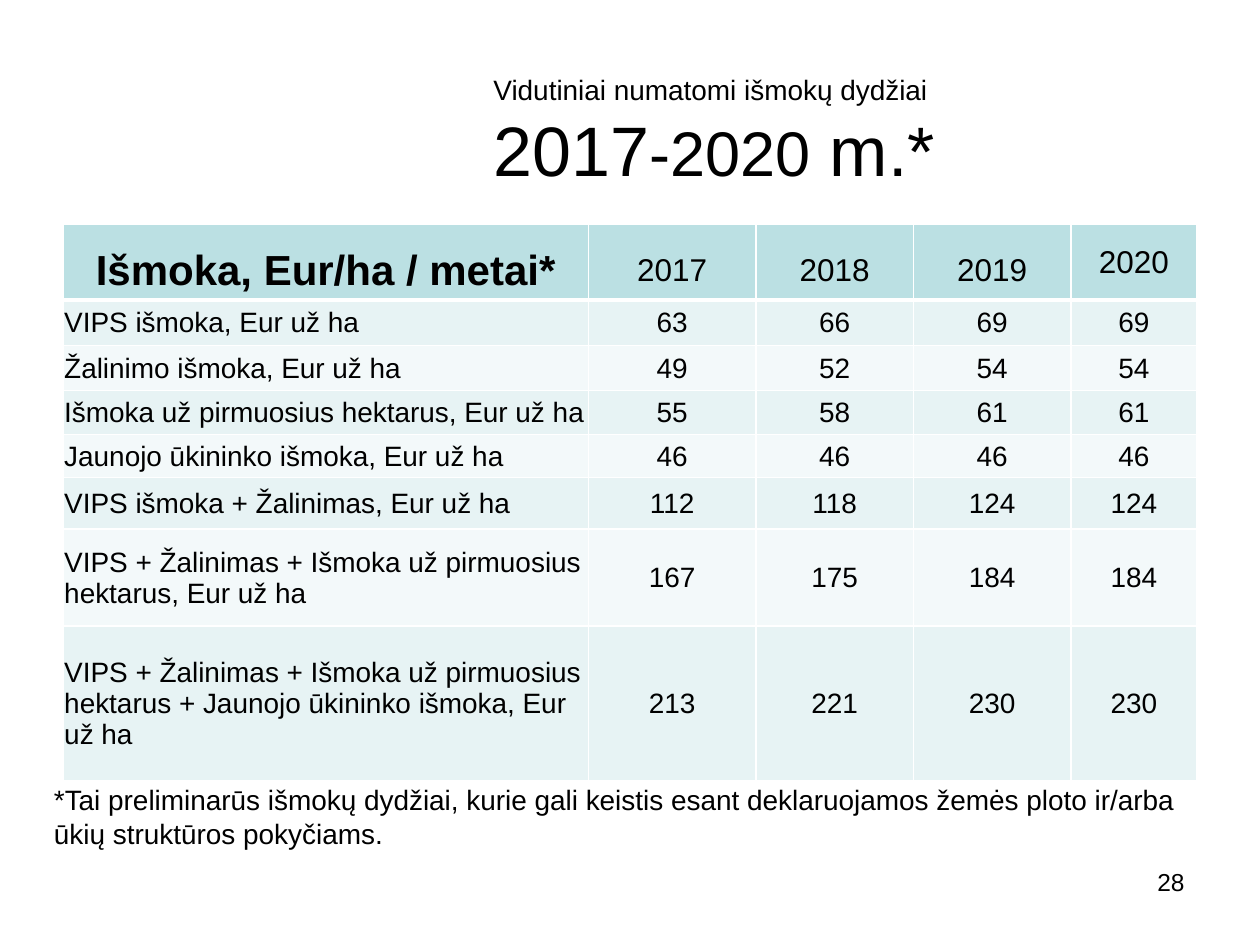
from lxml.etree import SubElement
from pptx import Presentation
from pptx.dml.color import RGBColor
from pptx.enum.text import MSO_ANCHOR, PP_ALIGN
from pptx.oxml.ns import qn
from pptx.util import Inches, Pt

BLACK = RGBColor(0x00, 0x00, 0x00)
WHITE = RGBColor(0xFF, 0xFF, 0xFF)
HEADER_TEAL = RGBColor(0xBB, 0xE0, 0xE3)
BAND_DARK = RGBColor(0xE7, 0xF3, 0xF4)
BAND_LIGHT = RGBColor(0xF3, 0xF9, 0xFA)

GRID_COLUMNS, GRID_ROWS = 100, 75

YEARS = ["2017", "2018", "2019", "2020"]
PAYMENTS = [
    ("VIPS išmoka, Eur už ha", 63, 66, 69, 69),
    ("Žalinimo išmoka, Eur už ha", 49, 52, 54, 54),
    ("Išmoka už pirmuosius hektarus, Eur už ha", 55, 58, 61, 61),
    ("Jaunojo ūkininko išmoka, Eur už ha", 46, 46, 46, 46),
    ("VIPS išmoka + Žalinimas, Eur už ha", 112, 118, 124, 124),
    ("VIPS + Žalinimas + Išmoka už pirmuosius hektarus, Eur už ha",
     167, 175, 184, 184),
    ("VIPS + Žalinimas + Išmoka už pirmuosius hektarus + "
     "Jaunojo ūkininko išmoka, Eur už ha", 213, 221, 230, 230),
]
COLUMN_WIDTHS = [41.7, 13.3, 12.5, 12.5, 10]
ROW_HEIGHTS = [5.5, 3.6, 3.6, 3.5, 3.4, 4.1, 7.7, 12.3]


def write(frame, *lines, size=16, bold=False, align=PP_ALIGN.LEFT, spacing=None):
    """Write lines of one paragraph; a line is text or (text, size) parts."""
    paragraph = frame.paragraphs[0]
    paragraph.alignment = align
    if spacing:
        paragraph.line_spacing = spacing
    for number, line in enumerate(lines):
        if number:
            paragraph.add_line_break()
        parts = [(line, size)] if isinstance(line, str) else line
        for text, part_size in parts:
            run = paragraph.add_run()
            run.text = text
            run.font.name = "Arial"
            run.font.size = Pt(part_size)
            run.font.bold = bold
            run.font.color.rgb = BLACK


class Deck:
    def __init__(self):
        self.presentation = Presentation()
        self.presentation.slide_width = Inches(10)
        self.presentation.slide_height = Inches(7.5)
        self.slide = self.presentation.slides.add_slide(
            self.presentation.slide_layouts[6])

    def across(self, columns):
        return round(self.presentation.slide_width * columns / GRID_COLUMNS)

    def down(self, rows):
        return round(self.presentation.slide_height * rows / GRID_ROWS)

    def place(self, left, top, width, height):
        return (self.across(left), self.down(top),
                self.across(width), self.down(height))

    def text(self, place, *lines, anchor=MSO_ANCHOR.TOP, **style):
        frame = self.slide.shapes.add_textbox(*self.place(*place)).text_frame
        frame.word_wrap = True
        frame.vertical_anchor = anchor
        write(frame, *lines, **style)

    def table(self, left, top, widths, heights):
        place = self.place(left, top, sum(widths), sum(heights))
        table = self.slide.shapes.add_table(
            len(heights), len(widths), *place).table
        for column, width in zip(table.columns, widths):
            column.width = self.across(width)
        for row, height in zip(table.rows, heights):
            row.height = self.down(height)
        return table

    def cell(self, cell, text, fill, borders, margins, anchor=MSO_ANCHOR.MIDDLE,
             **style):
        for side, points in borders.items():
            line = SubElement(cell._tc.get_or_add_tcPr(), qn(f"a:ln{side}"),
                              w=str(Pt(points)))
            SubElement(SubElement(line, qn("a:solidFill")), qn("a:srgbClr"),
                       val=str(WHITE))
        cell.fill.solid()
        cell.fill.fore_color.rgb = fill
        side_margin, top_margin = margins
        cell.margin_left = cell.margin_right = Inches(side_margin)
        cell.margin_top, cell.margin_bottom = Inches(top_margin), 0
        cell.vertical_anchor = anchor
        write(cell.text_frame, text, **style)


def main():
    deck = Deck()

    # Title
    deck.text((11.7, 4.2, 90, 12.5), "Vidutiniai numatomi išmokų dydžiai ",
              [("2017", 40), ("-2020", 36), (" m.*", 40)],
              anchor=MSO_ANCHOR.MIDDLE, align=PP_ALIGN.CENTER)

    # Payment table: header row
    payments = deck.table(5, 17.8, COLUMN_WIDTHS, ROW_HEIGHTS)
    header = dict(fill=HEADER_TEAL, borders=dict(L=1, R=1, T=1, B=3),
                  margins=(0.05, 0), align=PP_ALIGN.CENTER)
    deck.cell(payments.cell(0, 0), "Išmoka, Eur/ha / metai*", size=24, bold=True,
              spacing=1.5, anchor=MSO_ANCHOR.TOP, **header)
    for column, year in enumerate(YEARS, 1):
        deck.cell(payments.cell(0, column), year, size=18,
                  spacing=None if year == YEARS[-1] else 1.5, **header)

    # Payment table: banded body
    for row, values in enumerate(PAYMENTS, 1):
        borders = dict(L=1, R=1, T=3 if row == 1 else 1, B=1)
        for column, value in enumerate(values):
            deck.cell(payments.cell(row, column), str(value),
                      fill=BAND_DARK if row % 2 else BAND_LIGHT,
                      borders=borders, margins=(0.01, 0.01),
                      align=PP_ALIGN.CENTER if column else PP_ALIGN.LEFT)

    # Slide number and footnote
    deck.text((71.7, 68.3, 23.3, 5.2), "28", size=14, align=PP_ALIGN.RIGHT)
    deck.text((3.3, 61.6, 95.4, 6.4),
              "*Tai preliminarūs išmokų dydžiai, kurie gali keistis esant "
              "deklaruojamos žemės ploto ir/arba ūkių struktūros pokyčiams.",
              anchor=MSO_ANCHOR.MIDDLE)

    deck.presentation.save("out.pptx")


if __name__ == "__main__":
    main()
